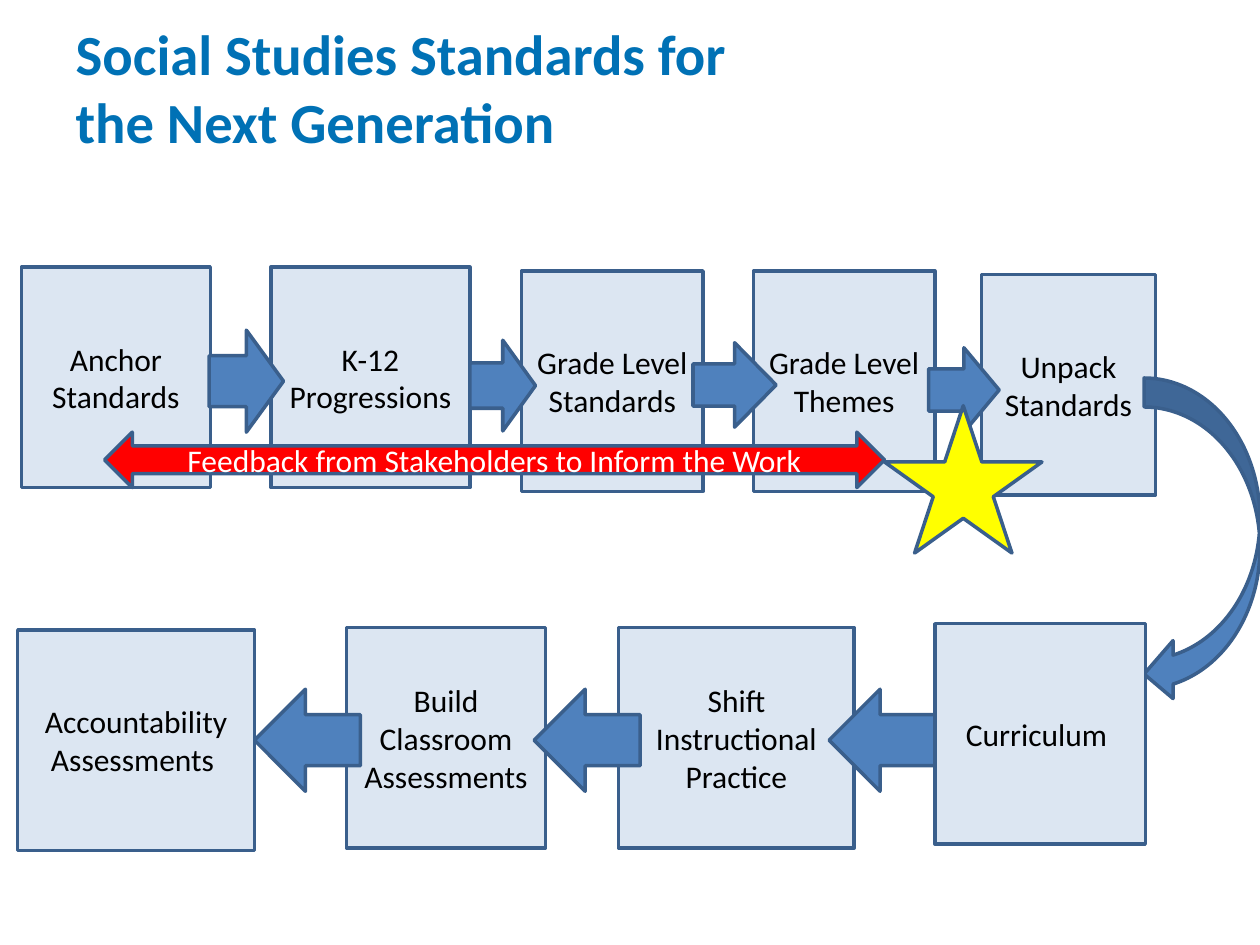
from pptx import Presentation
from pptx.dml.color import RGBColor
from pptx.enum import shapes, text
from pptx.util import Inches, Pt

KIND = shapes.MSO_SHAPE


def color(value):
    return RGBColor.from_string(value)


class FlowSlide:
    font = "Calibri"
    title_color = "0071B5"
    outline = "3A5F8C"
    box_fill = "DCE6F2"
    arrow_fill = "4F81BD"
    box_height = 1.75

    def __init__(self, deck):
        self.page = deck.slides.add_slide(deck.slide_layouts[5])

    def label(self, frame, words, size, ink, align, bold=False):
        frame.text = words
        frame.word_wrap = True
        frame.vertical_anchor = text.MSO_ANCHOR.MIDDLE
        for para in frame.paragraphs:
            para.alignment = align
            for span in para.runs:
                span.font.name = self.font
                span.font.size = Pt(size)
                span.font.bold = bold
                span.font.color.rgb = color(ink)

    def title(self, words, left, top, width, height):
        holder = self.page.shapes.title
        holder.left, holder.top = Inches(left), Inches(top)
        holder.width, holder.height = Inches(width), Inches(height)
        self.label(holder.text_frame, words, 32.4, self.title_color,
                   text.PP_ALIGN.LEFT, bold=True)
        holder.text_frame.auto_size = text.MSO_AUTO_SIZE.NONE

    def shape(self, kind, left, top, width, height, fill, words="", ink="000000"):
        item = self.page.shapes.add_shape(
            kind, Inches(left), Inches(top), Inches(width), Inches(height))
        item.shadow.inherit = False
        item.fill.solid()
        item.fill.fore_color.rgb = color(fill)
        item.line.color.rgb = color(self.outline)
        item.line.width = Pt(2)
        if words:
            self.label(item.text_frame, words, 18, ink, text.PP_ALIGN.CENTER)
        return item

    def step(self, words, left, top, width):
        self.shape(KIND.RECTANGLE, left, top, width, self.box_height,
                   self.box_fill, words)

    def arrow(self, left, top, width, height, kind=KIND.LEFT_ARROW, rotation=0):
        item = self.shape(kind, left, top, width, height, self.arrow_fill)
        item.rotation = rotation


def main():
    deck = Presentation()
    deck.slide_width, deck.slide_height = Inches(10), Inches(7.5)
    flow = FlowSlide(deck)
    flow.title("Social Studies Standards for \vthe Next Generation", 0.5, 0.3, 8, 0.78)

    for words, left, top, width in [
        ("Accountability Assessments ", 0.14, 5, 1.88),
        ("Build Classroom Assessments", 2.75, 4.98, 1.58),
        ("Shift Instructional Practice", 4.91, 4.98, 1.87),
        ("Unpack Standards", 7.79, 2.18, 1.38),
    ]:
        flow.step(words, left, top, width)

    flow.arrow(9.08, 3, 0.92, 2.58, KIND.CURVED_LEFT_ARROW)
    for left in (6.58, 4.24, 2.02):
        flow.arrow(left, 5.47, 0.84, 0.81)

    for words, left, top, width in [
        ("Anchor Standards", 0.17, 2.12, 1.5),
        ("K-12 Progressions", 2.15, 2.12, 1.58),
        ("Grade Level Standards", 4.14, 2.15, 1.44),
        ("Grade Level Themes", 5.98, 2.15, 1.44),
        ("Curriculum ", 7.42, 4.95, 1.67),
    ]:
        flow.step(words, left, top, width)

    for left, top, width, height in [
        (1.66, 2.62, 0.59, 0.81),
        (3.73, 2.7, 0.52, 0.72),
        (5.5, 2.72, 0.66, 0.67),
        (7.37, 2.76, 0.56, 0.67),
    ]:
        flow.arrow(left, top, width, height, rotation=180)

    flow.shape(KIND.STAR_5_POINT, 7.02, 3.22, 1.25, 1.17, "FFFF00")
    flow.shape(KIND.LEFT_RIGHT_ARROW, 0.83, 3.43, 6.19, 0.44, "FF0000",
               "Feedback from Stakeholders to Inform the Work", "FFFFFF")
    deck.save("out.pptx")


if __name__ == "__main__":
    main()
